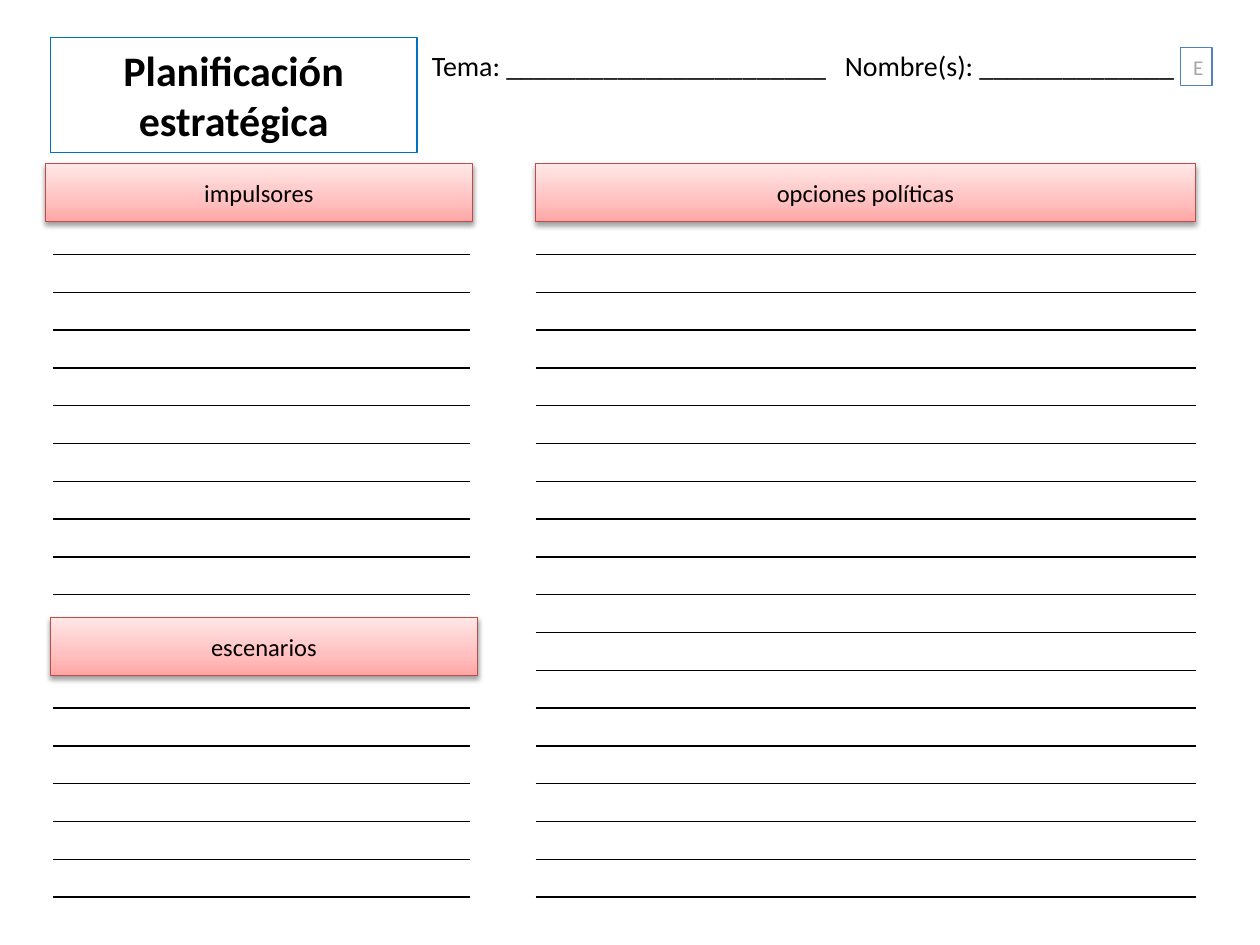
from dataclasses import dataclass, field
from typing import Any

from lxml.etree import SubElement
from pptx import Presentation
from pptx.dml.color import RGBColor
from pptx.enum.shapes import MSO_SHAPE as Shape
from pptx.enum.text import MSO_ANCHOR as Anchor, PP_ALIGN as Align
from pptx.oxml import parse_xml
from pptx.oxml.ns import nsdecls, qn
from pptx.util import Inches, Pt

COLORS = {
    "ink": "000000", "paper": "FFFFFF", "title": "0070C0", "tag": "4F81BD",
    "tag_text": "A6A6A6", "heading": "BF4C48",
}
HEADING_STOPS = [(0, "FFA6A5"), (35, "FFC0BF"), (100, "FFE7E7")]


def rgb(name):
    return RGBColor.from_string(COLORS[name])


@dataclass
class Worksheet:
    """Draws the parts of a ruled worksheet on one slide."""
    slide: Any
    font: str = "Calibri"
    line_width: Any = field(default_factory=lambda: Pt(0.75))

    def set_text(self, frame, text, size, color="ink", bold=False, align=Align.CENTER):
        paragraph = frame.paragraphs[0]
        paragraph.text = text
        paragraph.alignment = align
        font = paragraph.font
        font.name, font.size, font.bold = self.font, Pt(size), bold
        font.color.rgb = rgb(color)

    def box(self, place, text, size, line, anchor=Anchor.TOP, **style):
        box = self.slide.shapes.add_shape(Shape.RECTANGLE, *map(Inches, place))
        box.shadow.inherit = False
        box.fill.background()
        box.line.color.rgb = rgb(line)
        box.line.width = self.line_width
        box.text_frame.word_wrap = True
        box.text_frame.vertical_anchor = anchor
        self.set_text(box.text_frame, text, size, **style)
        return box

    def heading(self, left, top, width, text):
        heading = self.box((left, top, width, 0.46), text, 14, "heading", Anchor.MIDDLE)
        heading.fill.gradient()
        heading.fill.gradient_angle = 90
        properties = heading._element.spPr
        stops = properties.find(".//" + qn("a:gsLst"))
        for stop in list(stops):
            stops.remove(stop)
        for position, color in HEADING_STOPS:
            stop = SubElement(stops, qn("a:gs"), pos=str(position * 1000))
            SubElement(stop, qn("a:srgbClr"), val=color)
        shadow = SubElement(
            properties.find(qn("a:effectLst")), qn("a:outerShdw"), blurRad=str(Pt(3.1)),
            dist=str(Pt(1.6)), dir="5400000", rotWithShape="0")
        shade = SubElement(shadow, qn("a:srgbClr"), val=COLORS["ink"])
        SubElement(shade, qn("a:alpha"), val="38000")

    def label(self, place, text, size):
        label = self.slide.shapes.add_textbox(*map(Inches, place))
        label.text_frame.word_wrap = False
        self.set_text(label.text_frame, text, size, align=Align.LEFT)

    def border(self, cell, index, side, color=None):
        paint = (f'<a:solidFill><a:srgbClr val="{COLORS[color]}"/></a:solidFill>'
                 if color else "<a:noFill/>")
        cell._tc.get_or_add_tcPr().insert(index, parse_xml(
            f'<a:ln{side} {nsdecls("a")} w="{Pt(1)}">{paint}</a:ln{side}>'))

    def ruled_lines(self, left, top, width, rows=19, pitch=0.3):
        table = self.slide.shapes.add_table(
            rows, 1, Inches(left), Inches(top), Inches(width), Inches(rows * pitch)).table
        table.first_row = table.horz_banding = False
        for number, row in enumerate(table.rows):
            row.height = Inches(pitch)
            cell = row.cells[0]
            cell.margin_top = cell.margin_bottom = 0
            cell.fill.background()
            SubElement(cell.text_frame.paragraphs[0]._p, qn("a:endParaRPr"), sz="1200")
            sides = {"L": None, "R": None, "T": "ink" if number else "paper", "B": "ink"}
            for index, (side, color) in enumerate(sides.items()):
                self.border(cell, index, side, color)


def main():
    deck = Presentation()
    deck.slide_width, deck.slide_height = Inches(10), Inches(7.5)
    sheet = Worksheet(deck.slides.add_slide(deck.slide_layouts[6]))
    for left, width in ((0.42, 3.31), (4.25, 5.24)):
        sheet.ruled_lines(left, 1.42, width)
    sheet.box((0.4, 0.3, 2.91, 0.91), "Planificación estratégica", 24, "title", bold=True)
    sheet.label((3.33, 0.34, 6.23, 0.37),
                f"Tema: {'_' * 23}   Nombre(s): {'_' * 14}", 16)
    sheet.heading(0.4, 4.9, 3.39, "escenarios")
    sheet.heading(0.36, 1.3, 3.39, "impulsores")
    sheet.heading(4.25, 1.3, 5.24, "opciones políticas")
    sheet.box((9.37, 0.38, 0.25, 0.3), "E", 12, "tag", color="tag_text")
    deck.save("out.pptx")


if __name__ == "__main__":
    main()
